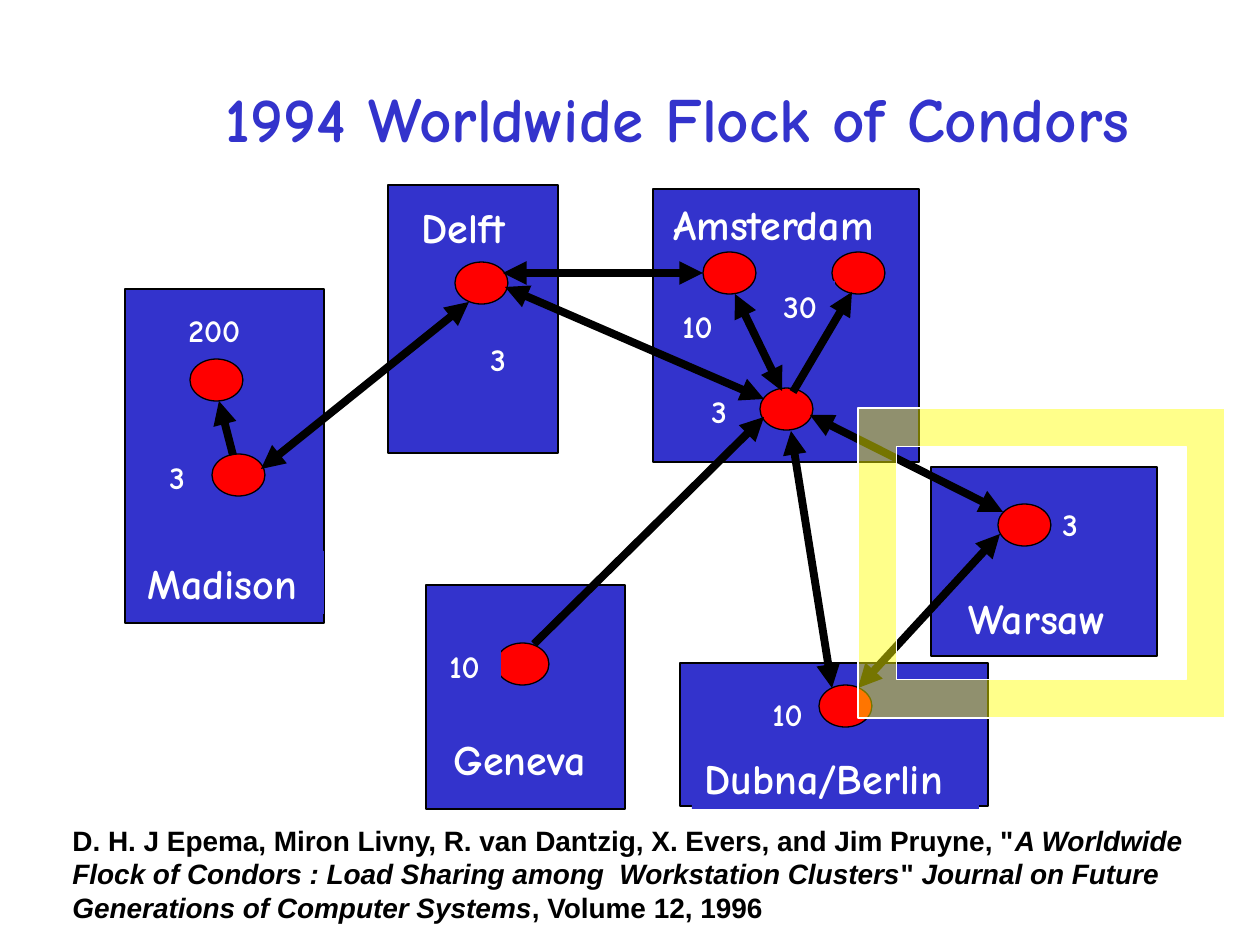
import pptx
import pptx.util
import pptx.dml.color
import pptx.enum.shapes
import pptx.enum.text
import pptx.oxml
import pptx.oxml.ns
import lxml.etree

PX = 914400 / 126
COLORS = {"blue": "3333CC", "red": "FF0000", "yellow": "FFFF00",
          "white": "FFFFFF", "black": "000000"}
RGB = {name: pptx.dml.color.RGBColor.from_string(code) for name, code in COLORS.items()}
SHAPE = pptx.enum.shapes.MSO_SHAPE
ANCHOR = pptx.enum.text.MSO_ANCHOR
qn = pptx.oxml.ns.qn

deck = pptx.Presentation()
deck.slide_width, deck.slide_height = round(1260 * PX), round(945 * PX)
slide = deck.slides.add_slide(deck.slide_layouts[6])


def add_box(kind, place, fill=None, line=None, runs=(), size=18, color="white", font="Comic Neue"):
    """Add a preset shape, or a text box when kind is None; runs is a list of lines."""
    place = [round(v * PX) for v in place]
    if kind is None:
        box = slide.shapes.add_textbox(*place)
    else:
        box = slide.shapes.add_shape(kind, *place)
        box.shadow.inherit = False
    if fill:
        box.fill.solid()
        box.fill.fore_color.rgb = RGB[fill]
    if line:
        box.line.color.rgb = RGB[line]
        box.line.width = pptx.util.Pt(0.75)
    frame = box.text_frame
    frame.word_wrap = False
    for i, parts in enumerate(runs):
        paragraph = frame.add_paragraph() if i else frame.paragraphs[0]
        for words, italic in parts:
            run = paragraph.add_run()
            run.text = words
            run.font.name = font
            run.font.size = pptx.util.Pt(size)
            run.font.bold = True
            run.font.italic = italic
            run.font.color.rgb = RGB[color]
    return box


def add_arrow(x1, y1, x2, y2, both=True):
    ends = [round(v * PX) for v in (x1, y1, x2, y2)]
    arrow = slide.shapes.add_connector(pptx.enum.shapes.MSO_CONNECTOR.STRAIGHT, *ends)
    arrow.line.color.rgb = RGB["black"]
    arrow.line.width = pptx.util.Pt(4.5)
    outline = arrow.line._get_or_add_ln()
    for tip in ("a:headEnd", "a:tailEnd") if both else ("a:tailEnd",):
        lxml.etree.SubElement(outline, qn(tip), type="triangle")
    lxml.etree.SubElement(arrow._element.spPr, qn("a:effectLst"))


# Citation
citation = add_box(None, (60, 810, 1176, 127), fill="white", size=16, color="black", font="Arial", runs=[
    [("D. H. J Epema, Miron Livny, R. van Dantzig, X. Evers, and Jim Pruyne, \"", False),
     ("A Worldwide", True)],
    [("Flock of Condors : Load Sharing among  Workstation Clusters", True),
     ("\" ", False), ("Journal on Future", True)],
    [("Generations of Computer Systems", True), (", Volume 12, 1996", False)],
])
citation.text_frame.vertical_anchor = ANCHOR.MIDDLE

# Title
title = add_box(None, (95, 54, 1165, 126), size=36, color="blue",
                runs=[[("1994 Worldwide Flock of Condors", False)]])
title.text_frame.word_wrap = True
title.text_frame.vertical_anchor = ANCHOR.MIDDLE
title.text_frame.paragraphs[0].alignment = pptx.enum.text.PP_ALIGN.CENTER

# Sites
sites = [
    (680, 663, 308, 143),  # Dubna/Berlin
    (653, 189, 266, 273),  # Amsterdam
    (931, 467, 226, 189),  # Warsaw
    (426, 585, 199, 224),  # Geneva
    (388, 185, 170, 268),  # Delft
    (125, 289, 199, 334),  # Madison
]
for site in sites:
    add_box(SHAPE.RECTANGLE, site, "blue", "black")

# Labels: some lie under the pools and arrows, the others over them
labels_under = [
    ("10", 760, 689), ("Dubna/Berlin", 692, 746), ("Amsterdam", 661, 192),
    ("3", 699, 386), ("Warsaw", 956, 586), ("3", 1050, 499),
]
labels_over = [
    ("200", 176, 305), ("3", 157, 452), ("Madison", 135, 551), ("Delft", 409, 195),
    ("10", 437, 641), ("3", 478, 334), ("Geneva", 441, 727), ("30", 771, 281), ("10", 670, 301),
]
city_widths = {"Dubna/Berlin": 287, "Amsterdam": 256, "Warsaw": 186,
               "Madison": 189, "Delft": 134, "Geneva": 168}
pools = [(190, 359), (212, 454), (455, 262), (703, 252), (832, 252),
         (760, 388), (998, 504), (819, 685), (496, 643)]
links = [
    (233, 455, 219, 401, False), (261, 469, 469, 302), (505, 287, 764, 399),
    (503, 273, 703, 273), (735, 294, 782, 391), (534, 644, 764, 417, False),
    (791, 431, 832, 688), (858, 688, 1000, 534), (810, 415, 1003, 512),
]
for labels in (labels_under, labels_over):
    for words, x, y in labels:
        city = words in city_widths
        width = city_widths[words] if city else 24 + 20 * len(words)
        label = add_box(None, (x, y, width, 63 if city else 50), "blue",
                        runs=[[(words, False)]], size=24 if city else 18)
        label.text_frame.auto_size = pptx.enum.text.MSO_AUTO_SIZE.SHAPE_TO_FIT_TEXT
    if labels is labels_under:
        for x, y in pools:
            add_box(SHAPE.OVAL, (x, y, 53, 42), "red", "black")
        for link in links:
            add_arrow(*link)

# Link inside Amsterdam, over its label
add_arrow(793, 392, 852, 292, False)

# Translucent highlight around Warsaw
highlight = add_box(SHAPE.FRAME, (858, 408, 367, 310), "yellow", "white")
tint = highlight._element.spPr.find(qn("a:solidFill"))[0]
lxml.etree.SubElement(tint, qn("a:alpha"), val="46000")

deck.save("out.pptx")
